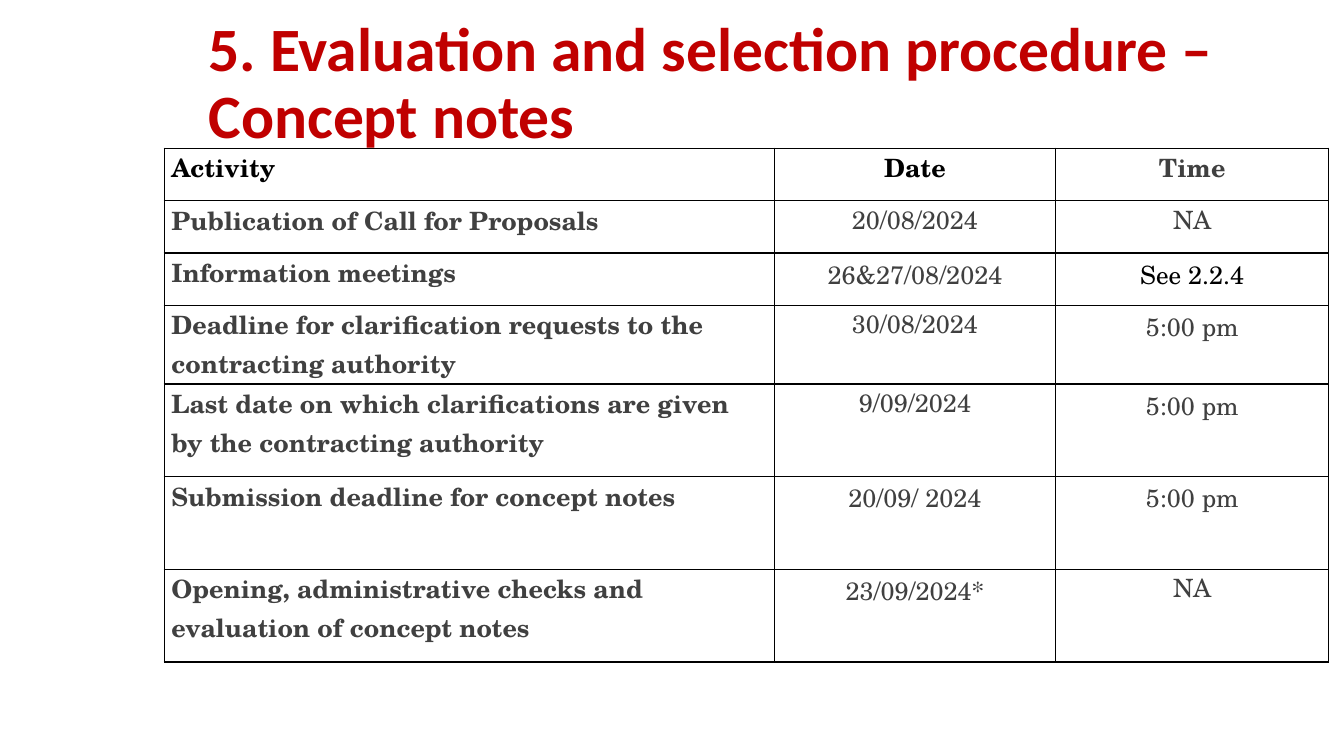
from pptx import Presentation
from pptx.dml.color import RGBColor
from pptx.enum.text import MSO_ANCHOR, PP_ALIGN
from pptx.oxml import parse_xml
from pptx.oxml.ns import nsdecls
from pptx.util import Inches, Pt

THEME = {
    "title": {"name": "Calibri", "size": Pt(44), "bold": True},
    "body": {"name": "TeX Gyre Schola", "size": Pt(18)},
    "red": RGBColor(0xC0, 0x00, 0x00),
    "black": RGBColor(0x00, 0x00, 0x00),
    "grey": RGBColor(0x40, 0x40, 0x40),
    "white": RGBColor(0xFF, 0xFF, 0xFF),
}
COLUMN_WIDTHS = [6.05, 2.79, 2.71]
ROW_HEIGHTS = [0.52, 0.52, 0.52, 0.78, 0.92, 0.92, 0.92]
SCHEDULE = [
    ("Activity", "Date", "Time"),
    ("Publication of Call for Proposals", "20/08/2024", "NA"),
    ("Information meetings", "26&27/08/2024", "See 2.2.4"),
    ("Deadline for clarification requests to the contracting authority", "30/08/2024", "5:00 pm"),
    ("Last date on which clarifications are given by the contracting authority", "9/09/2024", "5:00 pm"),
    ("Submission deadline for concept notes", "20/09/ 2024", "5:00 pm"),
    ("Opening, administrative checks and evaluation of concept notes", "23/09/2024*", "NA"),
]
BLACK_TEXTS = {"Activity", "Date", "See 2.2.4"}
LOOSE_TEXTS = {"26&27/08/2024", "See 2.2.4", "5:00 pm", "20/09/ 2024", "23/09/2024*"}


def set_font(font, values, color):
    for name, value in values.items():
        setattr(font, name, value)
    font.color.rgb = color


def add_borders(cell):
    properties = cell._tc.get_or_add_tcPr()
    for side in ("lnL", "lnR", "lnT", "lnB"):
        properties.append(parse_xml(
            f'<a:{side} {nsdecls("a")} w="{Pt(1)}"><a:solidFill>'
            f'<a:srgbClr val="{THEME["black"]}"/></a:solidFill></a:{side}>'))


presentation = Presentation()
presentation.slide_width = Inches(13.33)
presentation.slide_height = Inches(7.5)
slide = presentation.slides.add_slide(presentation.slide_layouts[6])

# Title
title = slide.shapes.add_textbox(Inches(1.97), Inches(0.12), Inches(10.29), Inches(1.45))
title.text_frame.word_wrap = True
title.text_frame.vertical_anchor = MSO_ANCHOR.MIDDLE
paragraph = title.text_frame.paragraphs[0]
paragraph.text = "5. Evaluation and selection procedure – Concept notes"
paragraph.line_spacing = 0.9
set_font(paragraph.font, THEME["title"], THEME["red"])

# Schedule table
table = slide.shapes.add_table(
    len(ROW_HEIGHTS), len(COLUMN_WIDTHS), Inches(1.63), Inches(1.47),
    Inches(sum(COLUMN_WIDTHS)), Inches(sum(ROW_HEIGHTS))).table
table.first_row = False
table.horz_banding = False
for column, width in zip(table.columns, COLUMN_WIDTHS):
    column.width = Inches(width)
for row, height in zip(table.rows, ROW_HEIGHTS):
    row.height = Inches(height)

# Cell texts, borders and fills
for row_index, texts in enumerate(SCHEDULE):
    for column_index, text in enumerate(texts):
        cell = table.cell(row_index, column_index)
        cell.margin_left = cell.margin_right = Inches(0.07)
        cell.margin_top = cell.margin_bottom = 0
        add_borders(cell)
        if (row_index < 3) != (column_index == 0):
            cell.fill.solid()
            cell.fill.fore_color.rgb = THEME["white"]
        else:
            cell.fill.background()

        paragraph = cell.text_frame.paragraphs[0]
        paragraph.text = text
        paragraph.alignment = PP_ALIGN.CENTER if column_index else PP_ALIGN.LEFT
        if text in LOOSE_TEXTS:
            paragraph.line_spacing = 1.07
        set_font(paragraph.font, THEME["body"],
                 THEME["black"] if text in BLACK_TEXTS else THEME["grey"])
        paragraph.font.bold = row_index == 0 or column_index == 0

presentation.save("out.pptx")
